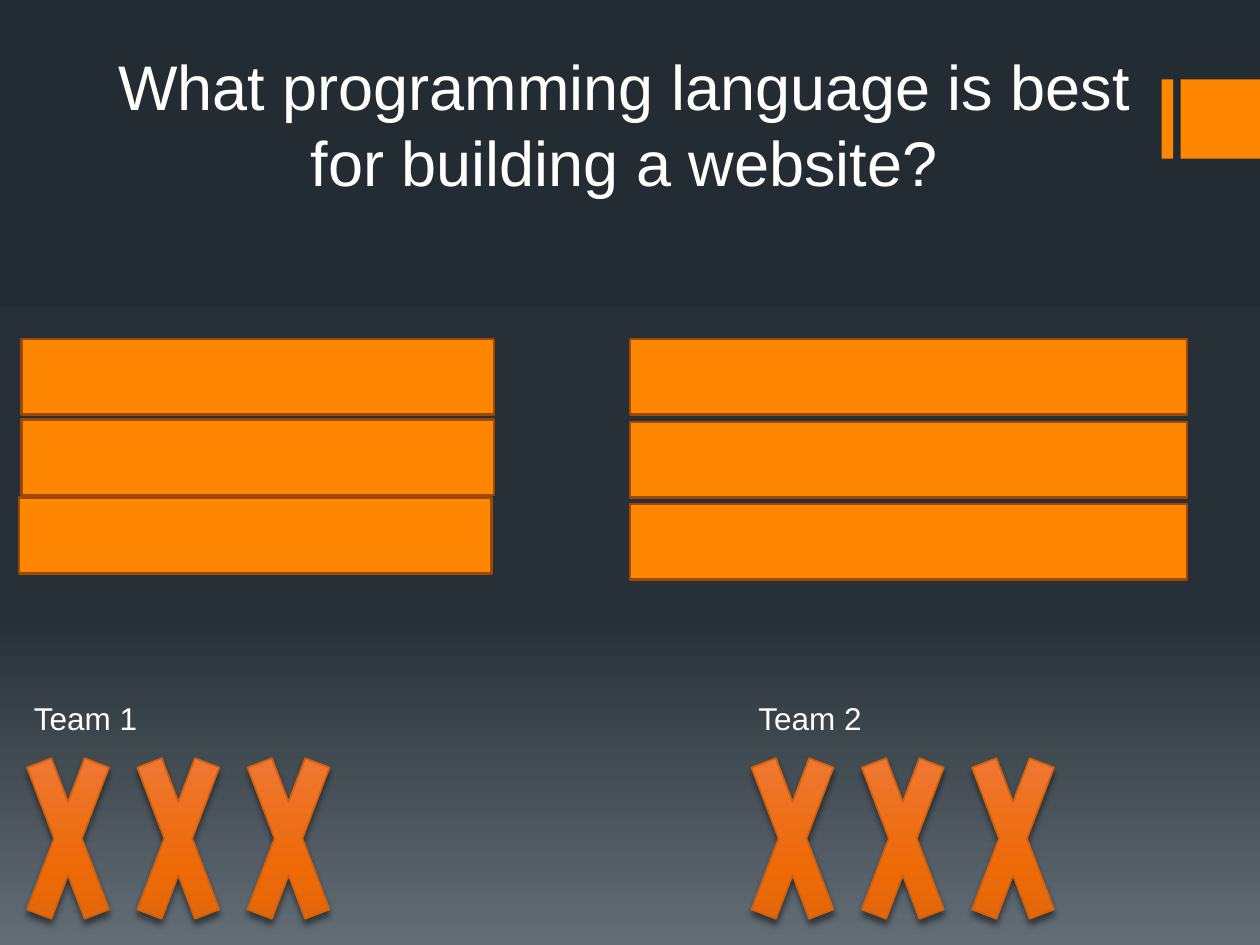
"""Build a quiz-board slide with covered answers and strike marks for two teams."""
from copy import deepcopy

from lxml import etree
from pptx import Presentation
from pptx import util as u
from pptx.dml import color
from pptx.enum import shapes, text
from pptx.oxml import ns

COLORS = {
    "text": "FFFFFF",
    "orange": "FF8600",
    "card_edge": "9B4809",
    "strike_edge": "D2610C",
    "shadow": "000000",
}
BACKDROP = [(0, "242C33"), (0.65, "273037"), (1, "636D76")]
STRIKE = [(0, "EE7F4C"), (0.6, "EE6A07"), (1, "D2610C")]


def rgb(name):
    return color.RGBColor.from_string(COLORS[name])


def apply_gradient(fill, element, stops):
    fill.gradient()
    fill.gradient_angle = 270
    stop_list = element.find(".//" + ns.qn("a:gsLst"))
    stop_list.append(deepcopy(stop_list[-1]))
    for stop, (position, value) in zip(fill.gradient_stops, stops):
        stop.position = position
        stop.color.rgb = color.RGBColor.from_string(value)


prs = Presentation()
prs.slide_width = u.Inches(10)
prs.slide_height = u.Inches(7.5)
slide = prs.slides.add_slide(prs.slide_layouts[6])
apply_gradient(slide.background.fill, slide.element, BACKDROP)

for left, width in [(9.22, 0.09), (9.37, 0.63)]:
    accent = slide.shapes.add_shape(
        shapes.MSO_SHAPE.RECTANGLE,
        u.Inches(left), u.Inches(0.63), u.Inches(width), u.Inches(0.63))
    accent.shadow.inherit = False
    accent.fill.solid()
    accent.fill.fore_color.rgb = rgb("orange")
    accent.line.fill.background()

answer_cards = [
    (0.17, 2.69, 3.75), (0.17, 3.33, 3.75), (0.15, 3.95, 3.75),
    (5, 2.69, 4.42), (5, 3.35, 4.42), (5, 4, 4.42),
]
for left, top, width in answer_cards:
    card = slide.shapes.add_shape(
        shapes.MSO_SHAPE.RECTANGLE,
        u.Inches(left), u.Inches(top), u.Inches(width), u.Inches(0.6))
    card.shadow.inherit = False
    card.fill.solid()
    card.fill.fore_color.rgb = rgb("orange")
    card.line.color.rgb = rgb("card_edge")
    card.line.width = u.Pt(1.5)

for team_left in (0.1, 5.85):
    for index in range(3):
        strike = slide.shapes.add_shape(
            shapes.MSO_SHAPE.MATH_MULTIPLY,
            u.Inches(team_left + 0.875 * index), u.Inches(5.5),
            u.Inches(0.88), u.Inches(2.31))
        strike.shadow.inherit = False
        apply_gradient(strike.fill, strike.element, STRIKE)
        strike.line.color.rgb = rgb("strike_edge")
        strike.line.width = u.Pt(1)
        effects = strike.element.find(".//" + ns.qn("a:effectLst"))
        shadow = etree.SubElement(
            effects, ns.qn("a:outerShdw"), blurRad=str(u.Pt(3.8)),
            dist=str(u.Pt(3)), dir="5400000", rotWithShape="0")
        tint = etree.SubElement(shadow, ns.qn("a:srgbClr"), val=COLORS["shadow"])
        etree.SubElement(tint, ns.qn("a:alpha"), val="48000")

labels = [
    ("What programming language is best for building a website?",
     0.83, 0.33, 8.25, 1.31, 36, text.PP_ALIGN.CENTER),
    ("Team 1", 0.17, 5.5, 3.42, 0.42, 18, text.PP_ALIGN.LEFT),
    ("Team 2", 5.92, 5.5, 3.42, 0.42, 18, text.PP_ALIGN.LEFT),
]
for wording, left, top, width, height, size, alignment in labels:
    label = slide.shapes.add_textbox(
        u.Inches(left), u.Inches(top), u.Inches(width), u.Inches(height))
    frame = label.text_frame
    frame.word_wrap = True
    frame.auto_size = text.MSO_AUTO_SIZE.SHAPE_TO_FIT_TEXT
    frame.text = wording
    paragraph = frame.paragraphs[0]
    paragraph.alignment = alignment
    font = paragraph.runs[0].font
    font.name = "Arial"
    font.size = u.Pt(size)
    font.color.rgb = rgb("text")

prs.save("out.pptx")
